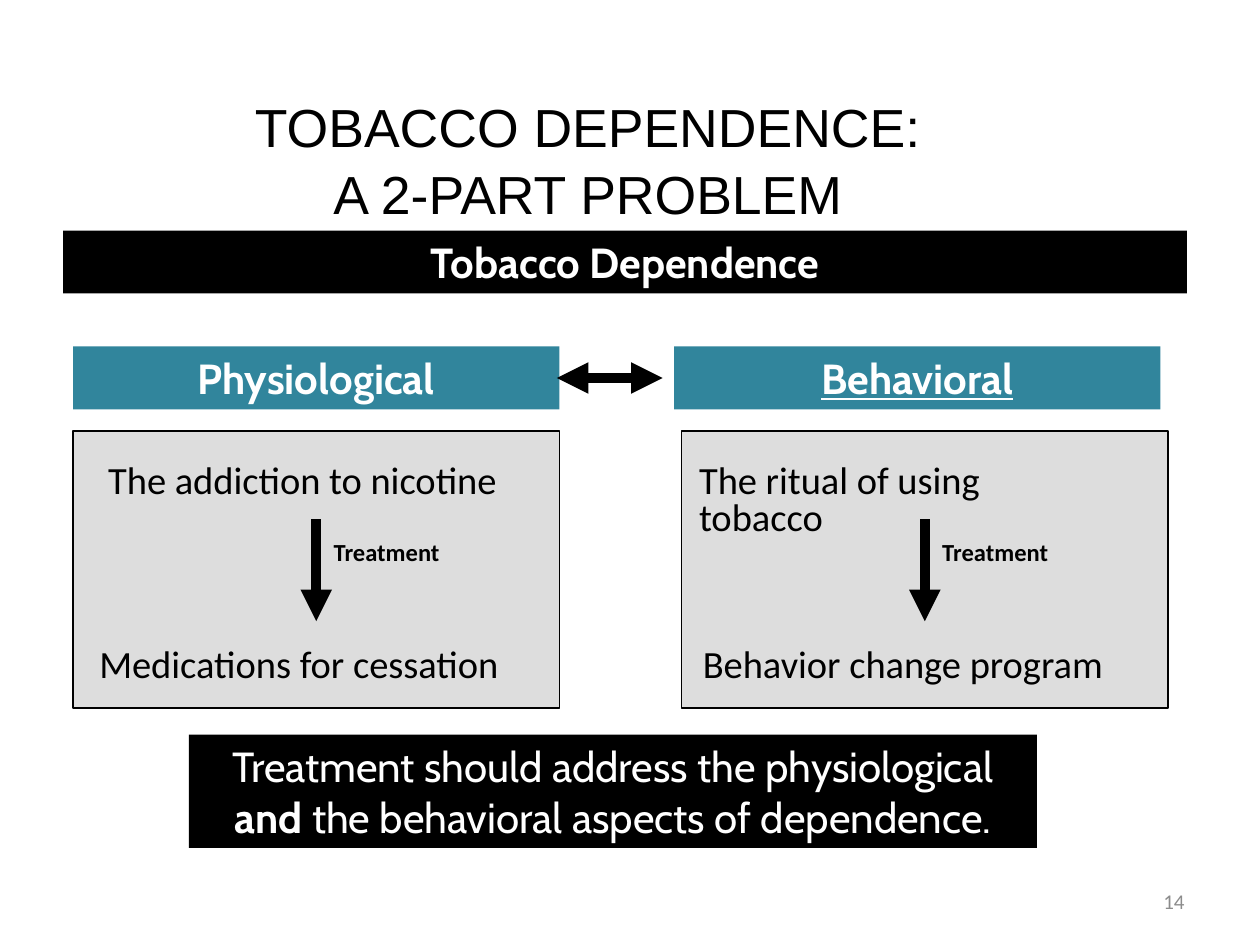
from lxml import etree
from pptx import Presentation, util as u
from pptx.dml.color import RGBColor
from pptx.enum import shapes, text
from pptx.oxml.ns import qn

# Content; "wrap" is the room for the upper statement, "left" its text edges
TITLE = "TOBACCO DEPENDENCE:\vA 2-PART PROBLEM"
BANNER = [("Tobacco Dependence", True)]
CONCLUSION = [
    ("Treatment should address the physiological ", False),
    ("and", True),
    (" the behavioral aspects of dependence.", False),
]
PARTS = [
    {"name": "Physiological", "underline": False,
     "problem": "The addiction to nicotine", "answer": "Medications for cessation",
     "heading_left": 0.58, "panel_left": 0.58, "left": (0.76, 0.69), "wrap": 3.52},
    {"name": "Behavioral", "underline": True,
     "problem": "The ritual of using tobacco", "answer": "Behavior change program",
     "heading_left": 5.35, "panel_left": 5.41, "left": (5.45, 5.48), "wrap": 3.4},
]
ARROW_LABEL = "Treatment"
PAGE_NUMBER = "14"

THEME = {
    "black": "000000", "white": "FFFFFF", "teal": "31859C",
    "panel": "DDDDDD", "muted": "8C8C8C",
    "title_font": "Arial", "bar_font": "Cabin", "body_font": "Calibri",
    "title": 30.6, "bar": 24, "body": 22, "label": 14, "number": 12,
}

# Shared rows and column widths, in inches
COLUMN, BAR = 3.86, 0.5
HEADING_TOP, PANEL_TOP, PANEL_HEIGHT = 2.75, 3.42, 2.2
PROBLEM_TOP, ARROW_TOP, ARROW_END, LABEL_TOP, ANSWER_TOP = 3.64, 4.12, 4.93, 4.26, 5.1

deck = Presentation()
deck.slide_width, deck.slide_height = u.Inches(10), u.Inches(7.5)
page = deck.slides.add_slide(deck.slide_layouts[6])


def color(name):
    return RGBColor.from_string(THEME[name])


def write(box, spans, font, size, ink="black", align=text.PP_ALIGN.LEFT,
          middle=False, wrap=True, spacing=None, underline=None):
    frame = box.text_frame
    frame.word_wrap = wrap
    frame.vertical_anchor = text.MSO_ANCHOR.MIDDLE if middle else text.MSO_ANCHOR.TOP
    para = frame.paragraphs[0]
    para.alignment = align
    if spacing:
        para.line_spacing = spacing
    para.font.name, para.font.size = THEME[font], u.Pt(THEME[size])
    para.font.color.rgb = color(ink)
    para.font.underline = underline
    for words, bold in spans:
        if "\v" in words:
            para.text = words
        else:
            span = para.add_run()
            span.text, span.font.bold = words, bold


def add_text(area, words, font, size, bold=False, **style):
    box = page.shapes.add_textbox(*map(u.Inches, area))
    write(box, [(words, bold)], font, size, **style)


def add_box(area, fill, line=None):
    box = page.shapes.add_shape(shapes.MSO_SHAPE.RECTANGLE, *map(u.Inches, area))
    box.shadow.inherit = False
    box.fill.solid()
    box.fill.fore_color.rgb = color(fill)
    if line:
        box.line.color.rgb = color(line)
        box.line.width = u.Pt(0.75)
    else:
        box.line.fill.background()
    return box


def add_bar(area, spans, fill="black", underline=None):
    write(add_box(area, fill), spans, "bar_font", "bar", ink="white",
          align=text.PP_ALIGN.CENTER, underline=underline)


def add_arrow(start, end, heads):
    arrow = page.shapes.add_connector(
        shapes.MSO_CONNECTOR.STRAIGHT, *map(u.Inches, start + end))
    arrow.line.color.rgb = color("black")
    arrow.line.width = u.Pt(6)
    outline = arrow.line._get_or_add_ln()
    for head in heads:
        etree.SubElement(outline, qn(f"a:{head}"), type="triangle")
    etree.SubElement(arrow._element.spPr, qn("a:effectLst"))


# Title and full-width bars
add_text((0.5, 0.67, 8.33, 1.17), TITLE, "title_font", "title",
         align=text.PP_ALIGN.CENTER, middle=True, spacing=1.05)
add_bar((0.5, 1.83, 8.92, BAR), BANNER)
add_bar((1.5, 5.83, 6.73, 0.9), CONCLUSION)

# Two columns: heading, panel, problem, treatment arrow, answer
for part in PARTS:
    add_bar((part["heading_left"], HEADING_TOP, COLUMN, BAR),
            [(part["name"], True)], "teal", part["underline"])
    add_box((part["panel_left"], PANEL_TOP, COLUMN, PANEL_HEIGHT), "panel", "black")
    center = part["panel_left"] + COLUMN / 2
    add_arrow((center, ARROW_TOP), (center, ARROW_END), ["tailEnd"])
    add_text((center + 0.04, LABEL_TOP, 1.14, 0.29), ARROW_LABEL,
             "body_font", "label", bold=True, wrap=False, spacing=0.8)
    problem_left, answer_left = part["left"]
    add_text((problem_left, PROBLEM_TOP, part["wrap"], 0.39), part["problem"],
             "body_font", "body", spacing=0.8)
    add_text((answer_left, ANSWER_TOP, 3.7, 0.39), part["answer"],
             "body_font", "body", spacing=0.8)

# Link between the two headings
link_row = HEADING_TOP + BAR / 2
add_arrow((4.42, link_row), (5.26, link_row), ["headEnd", "tailEnd"])

# Page number
add_text((7.17, 6.95, 2.33, 0.4), PAGE_NUMBER, "body_font", "number",
         ink="muted", align=text.PP_ALIGN.RIGHT, middle=True)

deck.save("out.pptx")
